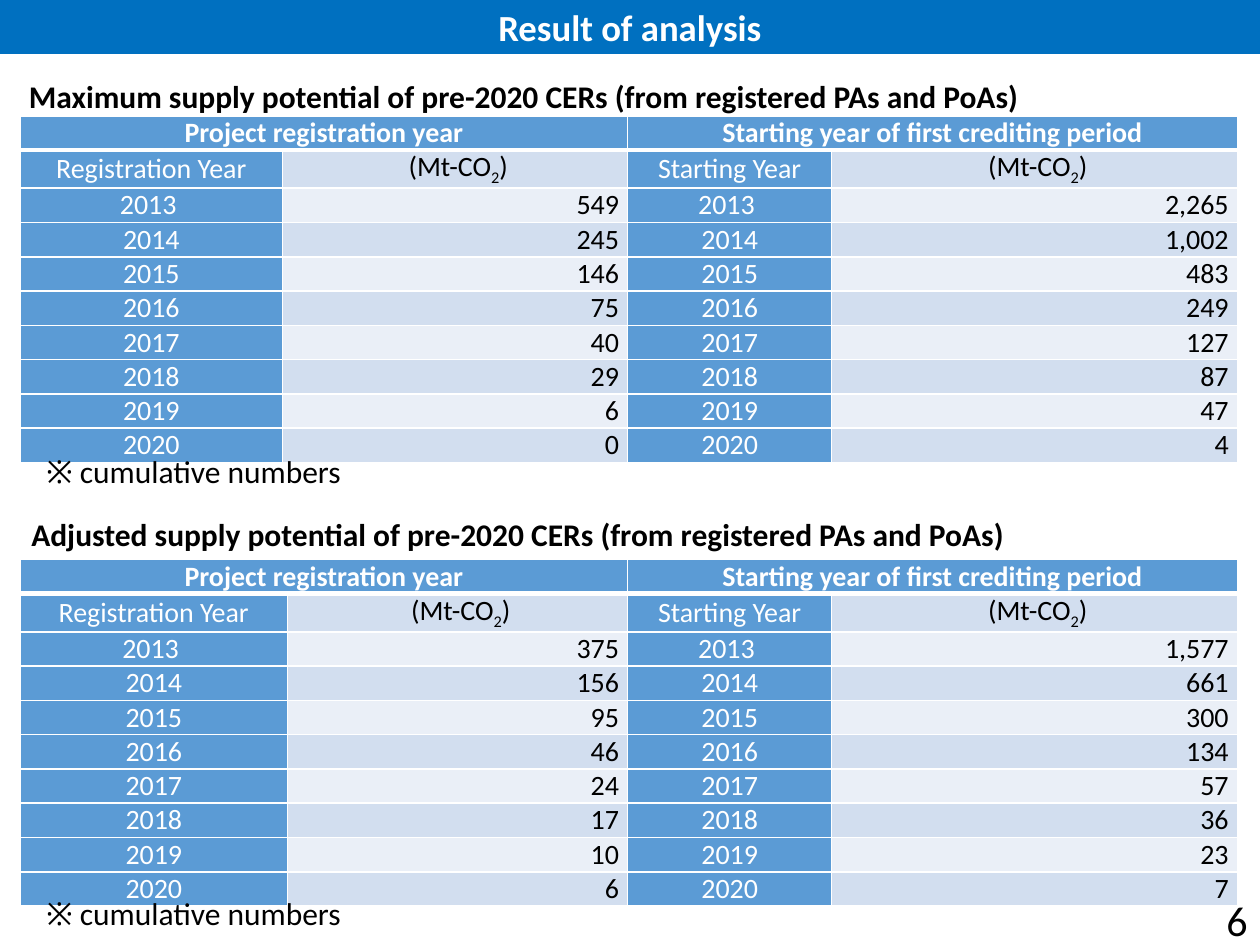
from dataclasses import dataclass

from lxml import etree
from pptx import Presentation
from pptx.dml.color import RGBColor
from pptx.enum.shapes import MSO_SHAPE
from pptx.enum.text import MSO_ANCHOR, PP_ALIGN
from pptx.oxml.ns import qn
from pptx.util import Pt

LEFT, CENTER, RIGHT = PP_ALIGN.LEFT, PP_ALIGN.CENTER, PP_ALIGN.RIGHT
TOP, MIDDLE = MSO_ANCHOR.TOP, MSO_ANCHOR.MIDDLE
RECTANGLE = MSO_SHAPE.RECTANGLE

COLORS = {
    "banner": "0070C0",
    "header": "5B9BD5",
    "dark_band": "D2DEEF",
    "light_band": "EAEFF7",
    "white": "FFFFFF",
    "black": "000000",
}
FONT = "Calibri"
YEARS = ["2013 ", *map(str, range(2014, 2021))]
GROUPS = ["Project registration year", "Starting year of first crediting period"]
UNIT = [" (Mt-CO", "2", ")"]
ROW_HEIGHT, UNIT_ROW_HEIGHT = 19.2, 21


@dataclass
class Label:
    text: str
    left: float
    top: float
    width: float
    size: float = 18
    bold: bool = False
    align: PP_ALIGN = LEFT
    anchor: MSO_ANCHOR = TOP


@dataclass
class SupplyTable:
    top: float
    column_widths: list[float]
    by_registration: list[str]
    by_start: list[str]
    value_anchor: MSO_ANCHOR


LABELS = [
    Label("Maximum supply potential of pre-2020 CERs (from registered PAs and PoAs)",
          9.4, 40.3, 694, bold=True),
    Label("Adjusted supply potential of pre-2020 CERs (from registered PAs and PoAs)",
          10.8, 290.9, 694, bold=True),
    Label("※ cumulative numbers", 19.4, 254.9, 250.6),
    Label("※ cumulative numbers", 19.4, 507.6, 250.6),
    Label("6", 558, 511.2, 162, size=24, align=RIGHT, anchor=MIDDLE),
]

TABLES = [
    SupplyTable(66.2, [149.8, 197.3, 116.6, 231.8],
                ["549", "245", "146", "75", "40", "29", "6", "0"],
                ["2,265", "1,002", "483", "249", "127", "87", "47", "4"], MIDDLE),
    SupplyTable(319.7, [152.6, 194.5, 116.6, 231.8],
                ["375", "156", "95", "46", "24", "17", "10", "6"],
                ["1,577", "661", "300", "134", "57", "36", "23", "7"], TOP),
]


def color(name: str) -> RGBColor:
    return RGBColor.from_string(COLORS[name])


def write(para, texts: list[str], size: float, ink: str, bold: bool, align) -> None:
    """Fill a paragraph; a second text is set as a subscript."""
    para.alignment = align
    para.font.name, para.font.size, para.font.bold = FONT, Pt(size), bold
    para.font.color.rgb = color(ink)
    for index, text in enumerate(texts):
        span = para.add_run()
        span.text = text
        if index == 1:
            span.font._element.set("baseline", "-25000")


def add_banner(page, text: str) -> None:
    box = page.shapes.add_shape(RECTANGLE, 0, 0, Pt(720), Pt(30.5))
    box.shadow.inherit = False
    box.fill.solid()
    box.fill.fore_color.rgb = color("banner")
    box.line.color.rgb = color("banner")
    box.line.width = Pt(1)
    frame = box.text_frame
    frame.vertical_anchor = MIDDLE
    frame.margin_top = frame.margin_bottom = Pt(2.9)
    write(frame.paragraphs[0], [text], 21, "white", True, CENTER)


def add_label(page, label: Label) -> None:
    box = page.shapes.add_textbox(Pt(label.left), Pt(label.top), Pt(label.width), Pt(28.8))
    frame = box.text_frame
    frame.word_wrap = True
    frame.vertical_anchor = label.anchor
    write(frame.paragraphs[0], [label.text], label.size, "black", label.bold, label.align)


def add_borders(cell, bottom_width: float) -> None:
    properties = cell._tc.get_or_add_tcPr()
    for side, width in (("lnL", 1), ("lnR", 1), ("lnT", 1), ("lnB", bottom_width)):
        line = etree.SubElement(properties, qn(f"a:{side}"), w=str(Pt(width)))
        fill = etree.SubElement(line, qn("a:solidFill"))
        etree.SubElement(fill, qn("a:srgbClr"), val=COLORS["white"])


def fill_cell(cell, texts: list[str], fill: str, ink: str = "white", bold: bool = False,
              align=CENTER, anchor=MIDDLE, bottom_width: float = 1) -> None:
    add_borders(cell, bottom_width)
    cell.fill.solid()
    cell.fill.fore_color.rgb = color(fill)
    cell.vertical_anchor = anchor
    cell.margin_left = cell.margin_right = Pt(5)
    cell.margin_top = cell.margin_bottom = 0
    write(cell.text_frame.paragraphs[0], texts, 16, ink, bold, align)


def add_supply_table(page, supply: SupplyTable) -> None:
    heights = [ROW_HEIGHT, UNIT_ROW_HEIGHT] + [ROW_HEIGHT] * len(YEARS)
    table = page.shapes.add_table(
        len(heights), len(supply.column_widths), Pt(11.6), Pt(supply.top),
        Pt(sum(supply.column_widths)), Pt(sum(heights))).table
    table.first_row = table.horz_banding = False
    for column, width in zip(table.columns, supply.column_widths):
        column.width = Pt(width)
    for row, height in zip(table.rows, heights):
        row.height = Pt(height)

    # Group headings, each across two columns
    for column in range(4):
        texts = [GROUPS[column // 2]] if column % 2 == 0 else []
        fill_cell(table.cell(0, column), texts, "header", bold=True, bottom_width=3)
    for column in (0, 2):
        table.cell(0, column).merge(table.cell(0, column + 1))

    # Column headings, then one year per row
    halves = [(0, "Registration Year", supply.by_registration),
              (2, "Starting Year", supply.by_start)]
    for column, heading, values in halves:
        fill_cell(table.cell(1, column), [heading], "header")
        fill_cell(table.cell(1, column + 1), UNIT, "dark_band", "black")
        for row, (year, value) in enumerate(zip(YEARS, values), start=2):
            band = "dark_band" if row % 2 else "light_band"
            fill_cell(table.cell(row, column), [year], "header")
            fill_cell(table.cell(row, column + 1), [value], band, "black",
                      align=RIGHT, anchor=supply.value_anchor)


def main() -> None:
    deck = Presentation()
    deck.slide_width, deck.slide_height = Pt(720), Pt(540)
    page = deck.slides.add_slide(deck.slide_layouts[6])
    add_banner(page, "Result of analysis")
    for supply in TABLES:
        add_supply_table(page, supply)
    for label in LABELS:
        add_label(page, label)
    deck.save("out.pptx")


if __name__ == "__main__":
    main()
